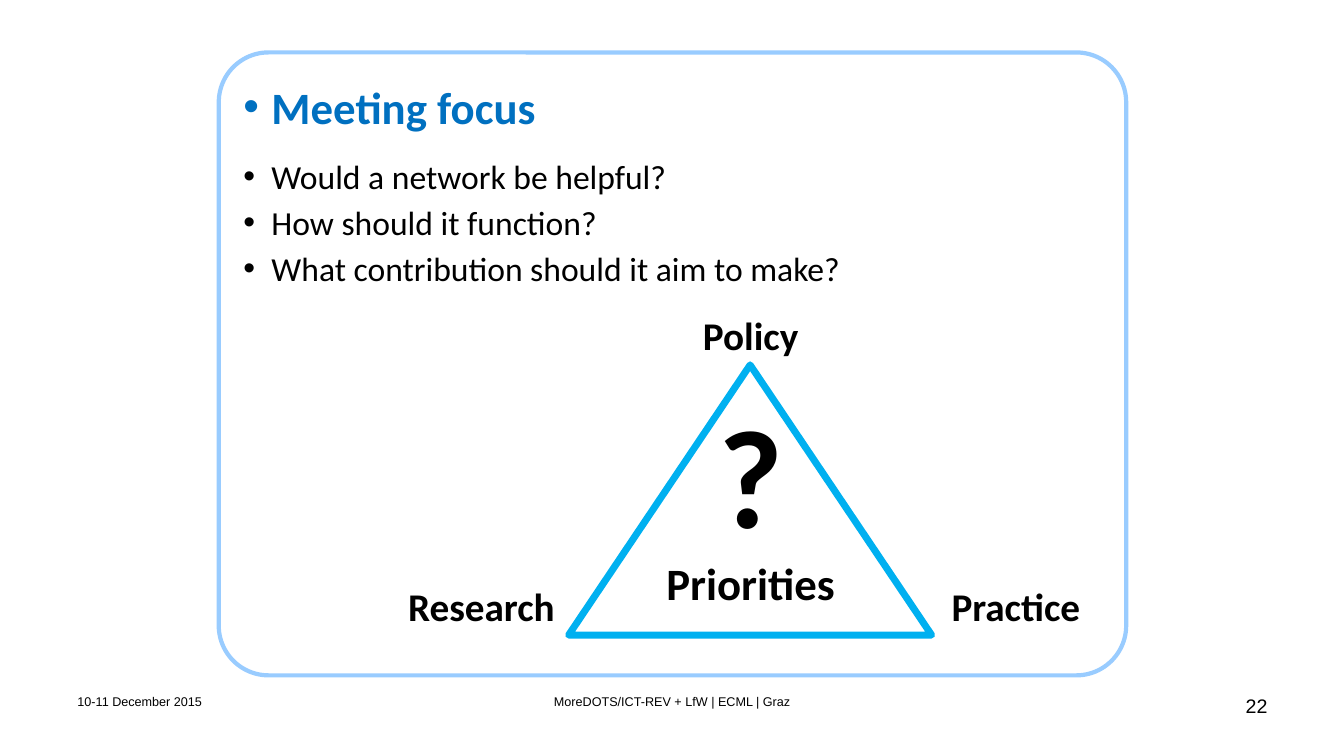
from dataclasses import dataclass

from lxml.etree import SubElement
from pptx import Presentation
from pptx.dml.color import RGBColor
from pptx.enum.shapes import MSO_SHAPE
from pptx.enum.text import MSO_ANCHOR, PP_ALIGN
from pptx.oxml.ns import qn
from pptx.util import Inches, Pt


@dataclass(frozen=True)
class Theme:
    heading: str = "0070C0"
    text: str = "000000"
    frame: str = "99CCFF"
    triangle: str = "00B0F0"
    body_font: str = "Calibri"
    footer_font: str = "Arial"
    question_size: int = 100
    heading_size: int = 32
    label_size: int = 28
    bullet_size: int = 24
    number_size: int = 14
    footer_size: int = 9


class SlideBuilder:
    def __init__(self, prs, theme):
        self.s = prs.slides.add_slide(prs.slide_layouts[6])
        self.theme = theme

    def format(self, p, size, font, bold=False, color=None):
        for r in p.runs:
            r.font.size = Pt(size)
            r.font.name = font
            r.font.bold = bold
            r.font.color.rgb = RGBColor.from_string(color or self.theme.text)

    def outline(self, kind, box, color, width):
        sp = self.s.shapes.add_shape(kind, *map(Inches, box))
        sp.shadow.inherit = False
        sp.fill.background()
        sp.line.color.rgb = RGBColor.from_string(color)
        sp.line.width = Pt(width)
        return sp

    def triangle(self, box):
        sp = self.outline(MSO_SHAPE.ISOSCELES_TRIANGLE, box, self.theme.triangle, 5)
        SubElement(sp.line._get_or_add_ln(), qn("a:round"))

    def bullet_panel(self, box, heading, points):
        t = self.theme
        sp = self.outline(MSO_SHAPE.ROUNDED_RECTANGLE, box, t.frame, 3)
        sp.adjustments[0] = 0.08
        tf = sp.text_frame
        tf.word_wrap = True
        tf.vertical_anchor = MSO_ANCHOR.TOP
        tf.text = "\n".join([heading, *points])
        for i, p in enumerate(tf.paragraphs):
            p.alignment = PP_ALIGN.LEFT
            p.line_spacing = 1.14
            if i == 0:
                p.space_before, p.space_after = Pt(6), Pt(12)
                self.format(p, t.heading_size, t.body_font, True, t.heading)
            else:
                self.format(p, t.bullet_size, t.body_font)
            self.bullet(p)

    def bullet(self, p):
        pPr = p._p.get_or_add_pPr()
        pPr.set("marL", str(Inches(0.28)))
        pPr.set("indent", str(Inches(-0.28)))
        SubElement(pPr, qn("a:buFont")).set("typeface", "Arial")
        SubElement(pPr, qn("a:buChar")).set("char", "•")

    def text(self, box, lines, font, align=PP_ALIGN.CENTER, bold=False):
        """Add a text box; lines holds (text, size) pairs."""
        tf = self.s.shapes.add_textbox(*map(Inches, box)).text_frame
        tf.word_wrap = True
        tf.text = "\n".join(line for line, _ in lines)
        for p, (_, size) in zip(tf.paragraphs, lines):
            p.alignment = align
            self.format(p, size, font, bold)


def main():
    prs = Presentation()
    prs.slide_width, prs.slide_height = Inches(13.33), Inches(7.5)
    theme = Theme()
    slide = SlideBuilder(prs, theme)

    # Framed question list
    slide.bullet_panel((2.17, 0.52, 9, 6.18), "Meeting focus", [
        "Would a network be helpful?",
        "How should it function?",
        "What contribution should it aim to make?",
    ])

    # Footer
    for left, width, words, size, align in [
        (0.67, 3.11, "10-11 December 2015", theme.footer_size, PP_ALIGN.LEFT),
        (4.04, 5.25, "MoreDOTS/ICT-REV + LfW | ECML | Graz", theme.footer_size, PP_ALIGN.CENTER),
        (9.56, 3.11, "22", theme.number_size, PP_ALIGN.RIGHT),
    ]:
        slide.text((left, 6.83, width, 0.52), [(words, size)], theme.footer_font, align)

    # Triangle and its centre
    slide.triangle((5.64, 3.62, 3.6, 2.68))
    slide.text((6.42, 3.8, 2.05, 2.32),
               [("?", theme.question_size), ("Priorities", theme.heading_size)],
               theme.body_font, bold=True)

    # Corner labels
    for left, top, width, label in [
        (6.54, 3.04, 1.81, "Policy"),
        (9.05, 5.73, 2.05, "Practice"),
        (3.75, 5.73, 2.05, "Research"),
    ]:
        slide.text((left, top, width, 0.57), [(label, theme.label_size)],
                   theme.body_font, bold=True)

    prs.save("out.pptx")


if __name__ == "__main__":
    main()
